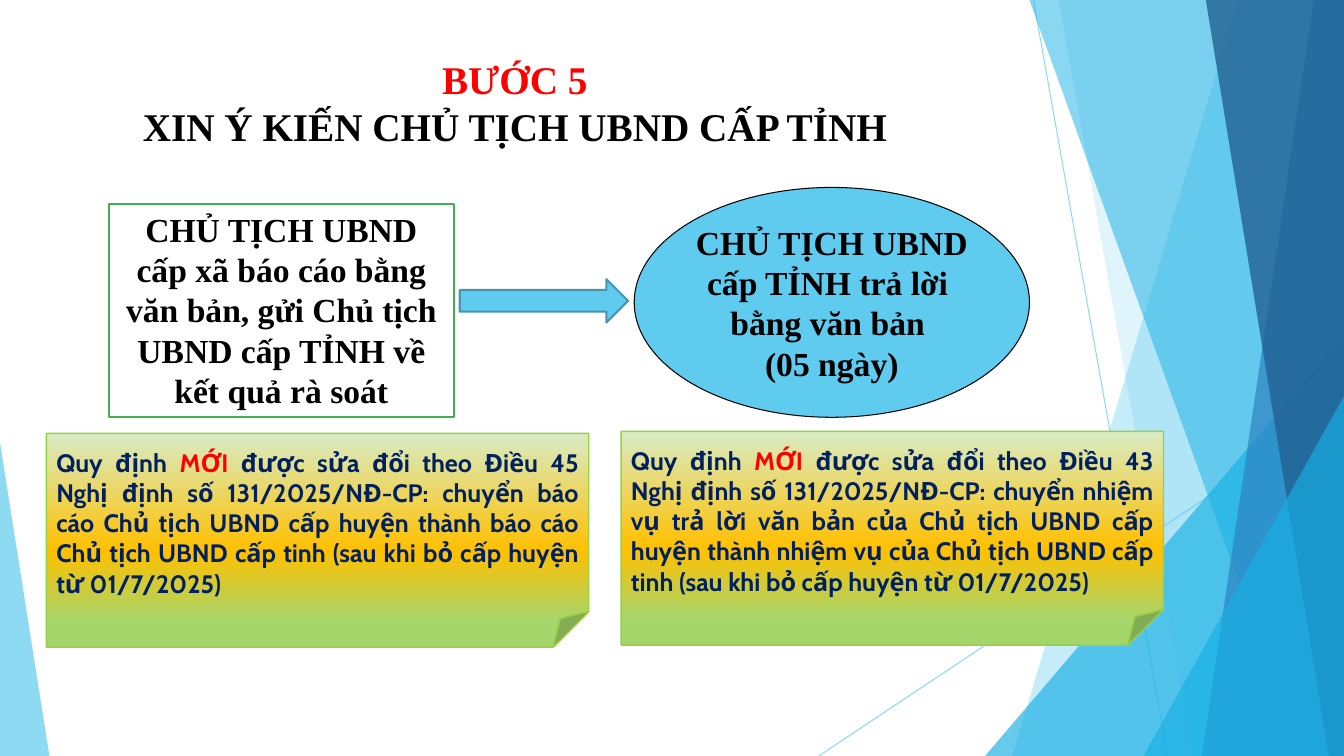
from dataclasses import dataclass

from lxml import etree
from pptx import Presentation
from pptx.dml.color import RGBColor
from pptx.enum import shapes, text
from pptx.oxml.ns import qn
from pptx.util import Inches, Pt

GEO = shapes.MSO_SHAPE
ALIGN = text.PP_ALIGN
ANCHOR = text.MSO_ANCHOR


@dataclass(frozen=True)
class Theme:
    sky: str = "5FCBEF"
    cyan: str = "17B0E4"
    blue: str = "2E83C3"
    deep: str = "226292"
    arrow_edge: str = "4696B1"
    box_edge: str = "42B051"
    note_edge: str = "96D141"
    note_stops: tuple = ((0, "D8ECC5"), (55, "FFC000"), (88, "A5D66C"))
    navy: str = "002060"
    red: str = "FF0000"
    black: str = "000000"
    white: str = "FFFFFF"
    serif: str = "Times New Roman"
    sans: str = "Cabin"
    title: int = 28
    step: int = 24
    note: int = 18


T = Theme()


def rgb(code):
    return RGBColor.from_string(code)


def set_alpha(s, percent):
    for color in s.element.spPr.iter(qn("a:srgbClr")):
        etree.SubElement(color, qn("a:alpha"), val=str(percent * 1000))


def style(s, fill=None, line=None, width=1.0, alpha=None):
    s.shadow.inherit = False
    if fill:
        s.fill.solid()
        s.fill.fore_color.rgb = rgb(fill)
    if line:
        s.line.color.rgb = rgb(line)
        s.line.width = Pt(width)
    else:
        s.line.fill.background()
    if alpha:
        set_alpha(s, alpha)


def add_shape(slide, kind, box, adjust=None, **look):
    s = slide.shapes.add_shape(kind, *map(Inches, box))
    if adjust is not None:
        s.adjustments[0] = adjust
    style(s, **look)
    return s


def add_polygon(slide, points, **look):
    start, *rest = [(Inches(x), Inches(y)) for x, y in points]
    builder = slide.shapes.build_freeform(*start)
    builder.add_line_segments(rest, close=True)
    style(builder.convert_to_shape(), **look)


def add_thin_line(slide, *ends):
    line = slide.shapes.add_connector(
        shapes.MSO_CONNECTOR.STRAIGHT, *map(Inches, ends))
    line.line.color.rgb = rgb(T.sky)
    line.line.width = Pt(0.75)
    set_alpha(line, 70)
    etree.SubElement(line.element.spPr, qn("a:effectLst"))


def write(s, paragraphs, size, font, align=ALIGN.CENTER,
          anchor=ANCHOR.MIDDLE, wrap=True):
    """Fill s with bold paragraphs, each a list of (words, colour) runs."""
    tf = s.text_frame
    tf.word_wrap = wrap
    tf.vertical_anchor = anchor
    for i, runs in enumerate(paragraphs):
        p = tf.add_paragraph() if i else tf.paragraphs[0]
        p.alignment = align
        for words, color in runs:
            r = p.add_run()
            r.text = words
            r.font.name = font
            r.font.size = Pt(size)
            r.font.bold = True
            r.font.color.rgb = rgb(color)


def fill_gradient(s, stops):
    """Run the colour stops from top to bottom."""
    s.fill.gradient()
    s.fill.gradient_angle = 270
    stop_list = s.element.spPr.find(".//" + qn("a:gsLst"))
    for old in list(stop_list):
        stop_list.remove(old)
    for percent, color in stops:
        stop = etree.SubElement(stop_list, qn("a:gs"), pos=str(percent * 1000))
        etree.SubElement(stop, qn("a:srgbClr"), val=color)


def add_note(slide, left, top, change):
    s = add_shape(slide, GEO.FOLDED_CORNER, (left, top, 5.38, 2.12),
                  line=T.note_edge)
    fill_gradient(s, T.note_stops)
    write(s, [[("Quy định ", T.navy), ("MỚI", T.red),
               (" được sửa đổi theo " + change, T.navy)]],
          T.note, T.sans, align=ALIGN.JUSTIFY)


def add_facets(slide):
    """Draw the translucent blue bands along the slide's edges."""
    def band(top_left, bottom_left, color, alpha):
        add_polygon(slide, [(top_left, 0), (13.33, 0), (13.33, 7.5),
                            (bottom_left, 7.5)], fill=color, alpha=alpha)

    def corner(box, apex, color, alpha):
        add_shape(slide, GEO.ISOSCELES_TRIANGLE, box, adjust=apex,
                  fill=color, alpha=alpha)

    add_thin_line(slide, 10.25, 0, 11.58, 7.5)
    add_thin_line(slide, 13.33, 4.03, 8.12, 7.5)
    band(12.28, 10.04, T.sky, 36)
    band(10.5, 11.83, T.sky, 20)
    corner((9.77, 3.33, 3.56, 4.17), 1, T.cyan, 66)
    band(10.21, 12.91, T.cyan, 50)
    band(13.03, 11.92, T.blue, 70)
    band(11.96, 13.18, T.deep, 80)
    corner((11.34, 3.93, 1.99, 3.57), 1, T.cyan, 66)
    corner((0, 4.39, 0.49, 3.11), 0, T.sky, 70)


def add_title(slide):
    s = slide.shapes.add_textbox(*map(Inches, (0, 0.49, 10.21, 1.05)))
    write(s, [[("BƯỚC 5", T.red)],
              [("XIN Ý KIẾN CHỦ TỊCH UBND CẤP TỈNH", T.black)]],
          T.title, T.serif)


def add_steps(slide):
    reply = add_shape(slide, GEO.OVAL, (6.29, 1.86, 3.92, 2.28),
                      fill=T.sky, line=T.black, width=0.75)
    reply_lines = ("CHỦ TỊCH UBND", "cấp TỈNH trả lời ", "bằng văn bản ",
                   "(05 ngày)")
    write(reply, [[(words, T.black)] for words in reply_lines],
          T.step, T.serif, wrap=False)
    report = add_shape(slide, GEO.RECTANGLE, (1.08, 2.02, 3.42, 2.12),
                       fill=T.white, line=T.box_edge, width=1.5)
    write(report, [[("CHỦ TỊCH UBND cấp xã báo cáo bằng văn bản, gửi Chủ tịch "
                     "UBND cấp TỈNH về kết quả rà soát", T.black)]],
          T.step, T.serif, anchor=ANCHOR.TOP)
    add_shape(slide, GEO.RIGHT_ARROW, (4.56, 2.77, 1.67, 0.43),
              fill=T.sky, line=T.arrow_edge, width=1.5)


def main():
    prs = Presentation()
    prs.slide_width, prs.slide_height = Inches(13.33), Inches(7.5)
    slide = prs.slides.add_slide(prs.slide_layouts[6])
    add_facets(slide)
    add_title(slide)
    add_steps(slide)
    add_note(slide, 0.46, 4.3,
             "Điều 45 Nghị định số 131/2025/NĐ-CP: chuyển báo cáo Chủ tịch "
             "UBND cấp huyện thành báo cáo Chủ tịch UBND cấp tinh "
             "(sau khi bỏ cấp huyện từ 01/7/2025)")
    add_note(slide, 6.16, 4.28,
             "Điều 43 Nghị định số 131/2025/NĐ-CP: chuyển nhiệm vụ trả lời "
             "văn bản của Chủ tịch UBND cấp huyện thành nhiệm vụ của "
             "Chủ tịch UBND cấp tinh (sau khi bỏ cấp huyện từ 01/7/2025)")
    prs.save("out.pptx")


if __name__ == "__main__":
    main()
